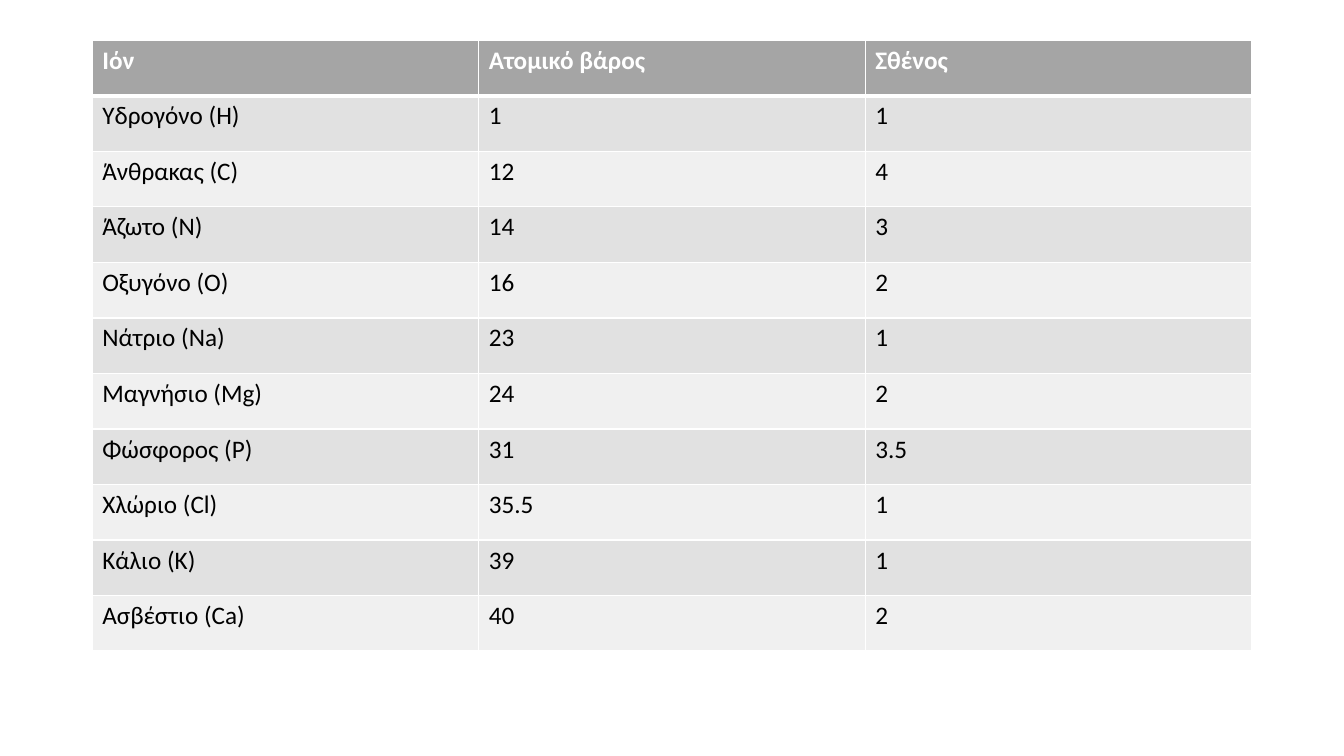
"""Build a slide with a table of ions, their atomic weights and valences."""
from lxml.etree import SubElement
from pptx import Presentation
from pptx.dml.color import RGBColor
from pptx.oxml.ns import qn
from pptx.util import Inches, Pt

HEADER = ("Ιόν", "Ατομικό βάρος", "Σθένος")
IONS = [
    ("Υδρογόνο (Η)", "1", "1"),
    ("Άνθρακας (C)", "12", "4"),
    ("Άζωτο (Ν)", "14", "3"),
    ("Οξυγόνο (Ο)", "16", "2"),
    ("Νάτριο (Na)", "23", "1"),
    ("Μαγνήσιο (Mg)", "24", "2"),
    ("Φώσφορος (Ρ)", "31", "3.5"),
    ("Χλώριο (Cl)", "35.5", "1"),
    ("Κάλιο (Κ)", "39", "1"),
    ("Ασβέστιο (Ca)", "40", "2"),
]
COLORS = {
    "header": "A5A5A5",
    "odd": "E1E1E1",
    "even": "F0F0F0",
    "border": "FFFFFF",
    "header_text": "FFFFFF",
    "body_text": "000000",
}
SLIDE_WIDTH, SLIDE_HEIGHT = Inches(13.33), Inches(7.5)
TABLE_WIDTH, TABLE_HEIGHT, TABLE_TOP = Inches(11.5), Inches(6.06), Inches(0.4)
THIN, THICK = Pt(1), Pt(3)


def add_borders(cell, top, bottom):
    """Draw the four border lines of a cell."""
    properties = cell._tc.get_or_add_tcPr()
    for side, width in (("L", THIN), ("R", THIN), ("T", top), ("B", bottom)):
        line = SubElement(properties, qn(f"a:ln{side}"), w=str(width))
        fill = SubElement(line, qn("a:solidFill"))
        SubElement(fill, qn("a:srgbClr"), val=COLORS["border"])


def fill_cell(cell, text, row):
    """Write and style one cell according to its row."""
    is_header = row == 0
    add_borders(cell, THICK if row == 1 else THIN, THICK if is_header else THIN)
    band = "header" if is_header else ("even", "odd")[row % 2]
    cell.fill.solid()
    cell.fill.fore_color.rgb = RGBColor.from_string(COLORS[band])
    cell.text = text
    font = cell.text_frame.paragraphs[0].font
    font.name, font.size, font.bold = "Calibri", Pt(18), is_header
    text_color = "header_text" if is_header else "body_text"
    font.color.rgb = RGBColor.from_string(COLORS[text_color])


def main():
    """Create and save the presentation."""
    presentation = Presentation()
    presentation.slide_width, presentation.slide_height = SLIDE_WIDTH, SLIDE_HEIGHT
    slide = presentation.slides.add_slide(presentation.slide_layouts[6])
    rows = [HEADER, *IONS]
    left = (SLIDE_WIDTH - TABLE_WIDTH) // 2
    table = slide.shapes.add_table(
        len(rows), len(HEADER), left, TABLE_TOP, TABLE_WIDTH, TABLE_HEIGHT
    ).table
    for row, values in enumerate(rows):
        for column, text in enumerate(values):
            fill_cell(table.cell(row, column), text, row)
    presentation.save("out.pptx")


if __name__ == "__main__":
    main()
